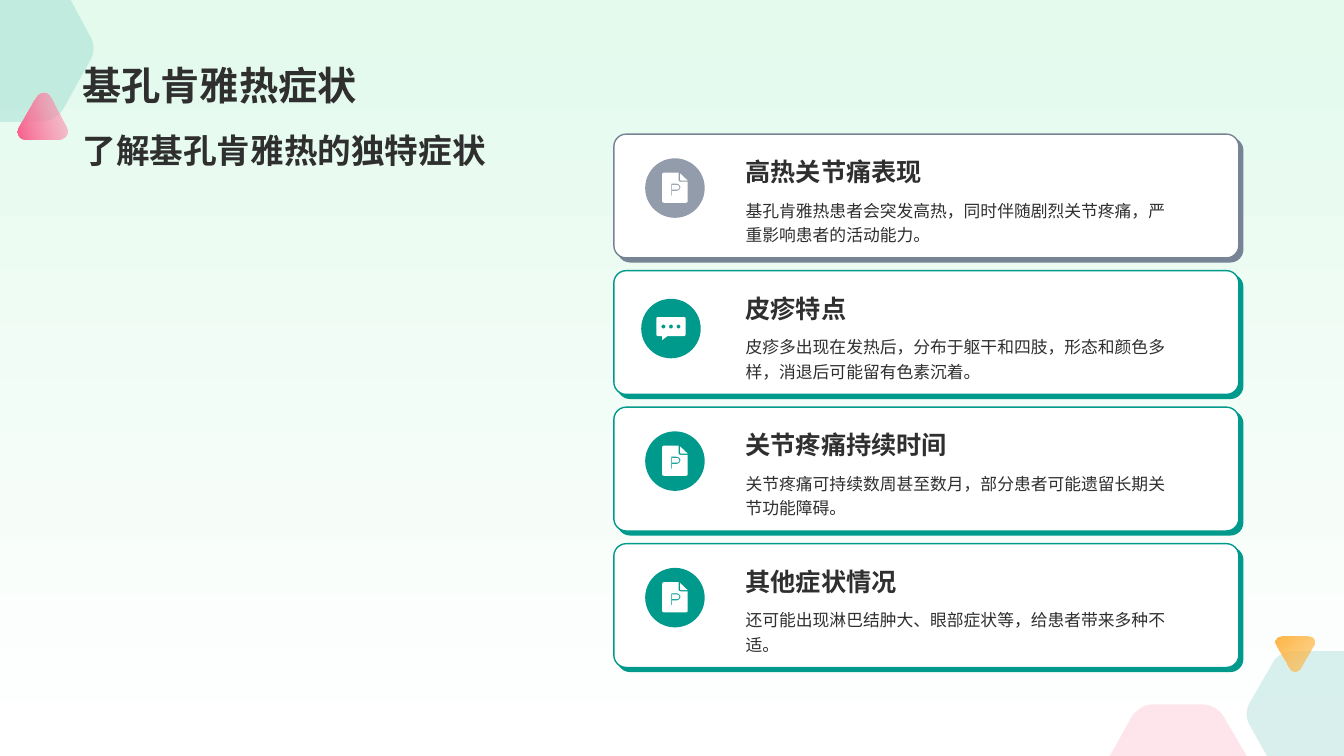
"""Build a slide on the symptoms of chikungunya fever."""
import math

from lxml import etree
from pptx import Presentation
from pptx import util as u
from pptx.dml.color import RGBColor
from pptx.enum import shapes, text
from pptx.oxml.ns import qn

INK = RGBColor(0x2F, 0x2F, 0x2F)
WHITE = RGBColor(0xFF, 0xFF, 0xFF)
MINT = RGBColor(0xE3, 0xFA, 0xED)
TEAL = RGBColor(0x00, 0x9A, 0x8C)
SLATE = RGBColor(0x77, 0x84, 0x95)
PINK = RGBColor(0xFA, 0x57, 0x85)
LIGHT_PINK = RGBColor(0xFC, 0x9A, 0xB6)
AMBER = RGBColor(0xFF, 0xB6, 0x44)
FONT = "Arial"

TITLE = "基孔肯雅热症状"
SUBTITLE = "了解基孔肯雅热的独特症状"
CARDS = [
    ("高热关节痛表现", "基孔肯雅热患者会突发高热，同时伴随剧烈关节疼痛，严重影响患者的活动能力。", SLATE, 80, "file"),
    ("皮疹特点", "皮疹多出现在发热后，分布于躯干和四肢，形态和颜色多样，消退后可能留有色素沉着。", TEAL, 100, "chat"),
    ("关节疼痛持续时间", "关节疼痛可持续数周甚至数月，部分患者可能遗留长期关节功能障碍。", TEAL, 100, "file"),
    ("其他症状情况", "还可能出现淋巴结肿大、眼部症状等，给患者带来多种不适。", TEAL, 100, "file"),
]

# Outlines in cm: a pair is a corner, six numbers are a Bezier curve.
TOP_HEXAGON = [(0, 0), (1.78, 0), (2.26, 0.89), (2.39, 1.09, 2.39, 1.35, 2.26, 1.55),
               (1.6, 2.74), (1.47, 2.95, 1.24, 3.07, 1.02, 3.07), (0, 3.07)]
CORNER_HEXAGON = [(32.59, 16.41), (33.87, 16.41), (33.87, 19.05), (31.93, 19.05), (31.5, 18.29),
                  (31.39, 18.11, 31.39, 17.88, 31.5, 17.7), (32.08, 16.69),
                  (32.18, 16.51, 32.38, 16.41, 32.59, 16.41)]
PINK_HEXAGON = [(29.06, 17.75), (30.3, 17.75), (30.53, 17.75, 30.73, 17.88, 30.84, 18.06),
                (31.42, 19.05), (27.97, 19.05), (28.52, 18.06),
                (28.65, 17.88, 28.83, 17.75, 29.06, 17.75)]
AMBER_TRIANGLE = [(32.77, 16.84), (33.1, 16.28), (33.17, 16.18, 33.1, 16.05, 32.97, 16.05),
                  (32.31, 16.05), (32.18, 16.05, 32.11, 16.18, 32.18, 16.28), (32.51, 16.84),
                  (32.56, 16.94, 32.72, 16.94, 32.77, 16.84)]
PINK_TRIANGLE = [(1.68, 3.2), (1.27, 2.44), (1.19, 2.29, 0.99, 2.29, 0.91, 2.44),
                 (0.46, 3.2), (0.38, 3.35, 0.48, 3.51, 0.64, 3.51), (1.5, 3.51),
                 (1.65, 3.48, 1.75, 3.33, 1.68, 3.2)]

FILE_PAGE = [(0.41, 0), (0.41, 0.18), (0.41, 0.21, 0.43, 0.23, 0.46, 0.23), (0.64, 0.23),
             (0.64, 0.72), (0.64, 0.75, 0.62, 0.76, 0.59, 0.76), (0.05, 0.76),
             (0.02, 0.76, 0, 0.75, 0, 0.72), (0, 0.05), (0, 0.02, 0.02, 0, 0.05, 0)]
LETTER_OUTER = [(0.36, 0.28), (0.23, 0.28), (0.23, 0.58), (0.25, 0.58), (0.25, 0.46),
                (0.36, 0.46), (0.41, 0.46, 0.46, 0.41, 0.46, 0.37),
                (0.46, 0.33, 0.41, 0.28, 0.36, 0.28)]
LETTER_INNER = [(0.36, 0.31), (0.39, 0.31, 0.43, 0.33, 0.43, 0.37),
                (0.43, 0.41, 0.39, 0.43, 0.36, 0.43), (0.25, 0.43), (0.25, 0.31)]
FILE_FOLD = [(0.64, 0.2), (0.48, 0.2), (0.46, 0.2, 0.45, 0.19, 0.45, 0.18), (0.45, 0.02)]
BUBBLE = [(0.69, 0), (0.72, 0, 0.74, 0.02, 0.74, 0.05), (0.74, 0.43),
          (0.74, 0.46, 0.72, 0.48, 0.69, 0.48), (0.28, 0.48), (0.15, 0.58), (0.15, 0.48),
          (0.05, 0.48), (0.02, 0.48, 0, 0.46, 0, 0.43), (0, 0.05), (0, 0.02, 0.02, 0, 0.05, 0)]
DOTS = [[(x + 0.05 * math.cos(step * math.pi / 8), 0.24 + 0.05 * math.sin(step * math.pi / 8))
         for step in range(16)] for x in (0.18, 0.37, 0.56)]

ICONS = {
    "file": {"badge": (0.79, 0.61), "inset": (0.43, 0.36),
             "outlines": [FILE_PAGE, LETTER_OUTER, LETTER_INNER, FILE_FOLD]},
    "chat": {"badge": (0.69, 0.71), "inset": (0.38, 0.46), "outlines": [BUBBLE, *DOTS]},
}
CARD_LEFT, CARD_TOP, CARD_WIDTH, CARD_HEIGHT, CARD_PITCH = 15.47, 3.38, 15.75, 3.12, 3.44
BADGE_SIZE = 1.5


def set_alpha(color_parent, percent):
    for color in color_parent.iter(qn("a:srgbClr")):
        etree.SubElement(color, qn("a:alpha"), val=str(percent * 1000))


def paint(shape, color, alpha=100):
    shape.shadow.inherit = False
    shape.line.fill.background()
    shape.fill.solid()
    shape.fill.fore_color.rgb = color
    if alpha < 100:
        set_alpha(shape._element.spPr.find(qn("a:solidFill")), alpha)


def set_gradient(fill, colors, angle):
    fill.gradient()
    fill.gradient_angle = angle
    for stop, color in zip(fill.gradient_stops, colors):
        stop.color.rgb = color


def flatten(outline, left, top):
    points = []
    for step in outline:
        if len(step) == 2:
            points.append(step)
            continue
        controls = [points[-1], step[:2], step[2:4], step[4:]]
        for part in range(1, 9):
            t = part / 8
            weights = ((1 - t) ** 3, 3 * t * (1 - t) ** 2, 3 * t * t * (1 - t), t ** 3)
            points.append(tuple(sum(w * c[axis] for w, c in zip(weights, controls))
                                for axis in (0, 1)))
    return [(u.Cm(left + x), u.Cm(top + y)) for x, y in points]


def add_outlines(slide, outlines, color, alpha=100, left=0, top=0):
    first, *others = [flatten(outline, left, top) for outline in outlines]
    builder = slide.shapes.build_freeform(*first[0])
    builder.add_line_segments(first[1:])
    for points in others:
        builder.move_to(*points[0])
        builder.add_line_segments(points[1:])
    shape = builder.convert_to_shape()
    paint(shape, color, alpha)
    return shape


def add_triangle(slide, outline, colors, alphas, angle):
    shape = add_outlines(slide, [outline], colors[0])
    set_gradient(shape.fill, colors, angle)
    for stop, alpha in zip(shape._element.spPr.iter(qn("a:gs")), alphas):
        set_alpha(stop, alpha)


def add_rounded(slide, left, top, width, height, corner, color, alpha=100):
    shape = slide.shapes.add_shape(shapes.MSO_SHAPE.ROUNDED_RECTANGLE,
                                   u.Cm(left), u.Cm(top), u.Cm(width), u.Cm(height))
    shape.adjustments[0] = corner
    paint(shape, color, alpha)
    return shape


def add_text(slide, words, left, top, width, height, size, bold=True, bottom=False, spacing=1.0):
    frame = slide.shapes.add_textbox(u.Cm(left), u.Cm(top), u.Cm(width), u.Cm(height)).text_frame
    frame.word_wrap = True
    frame.vertical_anchor = text.MSO_ANCHOR.BOTTOM if bottom else text.MSO_ANCHOR.TOP
    paragraph = frame.paragraphs[0]
    paragraph.text = words
    paragraph.line_spacing = spacing
    font = paragraph.font
    font.name, font.size, font.bold = FONT, u.Pt(size), bold
    font.color.rgb = INK


def add_card(slide, top, heading, body, color, alpha, icon_name):
    card = add_rounded(slide, CARD_LEFT, top, CARD_WIDTH, CARD_HEIGHT, 0.1, WHITE)
    card.line.color.rgb = color
    card.line.width = u.Pt(1)
    effects = card._element.spPr.find(qn("a:effectLst"))
    shadow = etree.SubElement(effects, qn("a:outerShdw"), blurRad="0", dist=str(u.Pt(4)),
                              dir="2700000", algn="tl", rotWithShape="0")
    etree.SubElement(shadow, qn("a:srgbClr"), val=str(color))
    add_text(slide, heading, 18.54, top + 0.2, 8.94, 1.25, 18, bottom=True)
    add_text(slide, body, 18.54, top + 1.45, 11.28, 1.47, 12, bold=False, spacing=1.2)
    icon = ICONS[icon_name]
    left, badge_top = CARD_LEFT + icon["badge"][0], top + icon["badge"][1]
    add_rounded(slide, left, badge_top, BADGE_SIZE, BADGE_SIZE, 0.5, color, alpha)
    add_outlines(slide, icon["outlines"], WHITE,
                 left=left + icon["inset"][0], top=badge_top + icon["inset"][1])


def main():
    presentation = Presentation()
    presentation.slide_width, presentation.slide_height = u.Cm(33.87), u.Cm(19.05)
    slide = presentation.slides.add_slide(presentation.slide_layouts[6])
    set_gradient(slide.background.fill, (MINT, WHITE), 270)
    add_outlines(slide, [TOP_HEXAGON], TEAL, 15)
    add_outlines(slide, [CORNER_HEXAGON], TEAL, 15)
    add_triangle(slide, AMBER_TRIANGLE, (AMBER, AMBER), (50, 100), 135)
    add_outlines(slide, [PINK_HEXAGON], PINK, 15)
    add_triangle(slide, PINK_TRIANGLE, (LIGHT_PINK, PINK), (50, 96), 195)
    add_text(slide, TITLE, 1.83, 0.36, 30.18, 2.49, 28, bottom=True)
    add_text(slide, SUBTITLE, 1.83, 3.15, 11.63, 5.56, 24)
    for index, card in enumerate(CARDS):
        add_card(slide, CARD_TOP + index * CARD_PITCH, *card)
    presentation.save("out.pptx")


if __name__ == "__main__":
    main()
